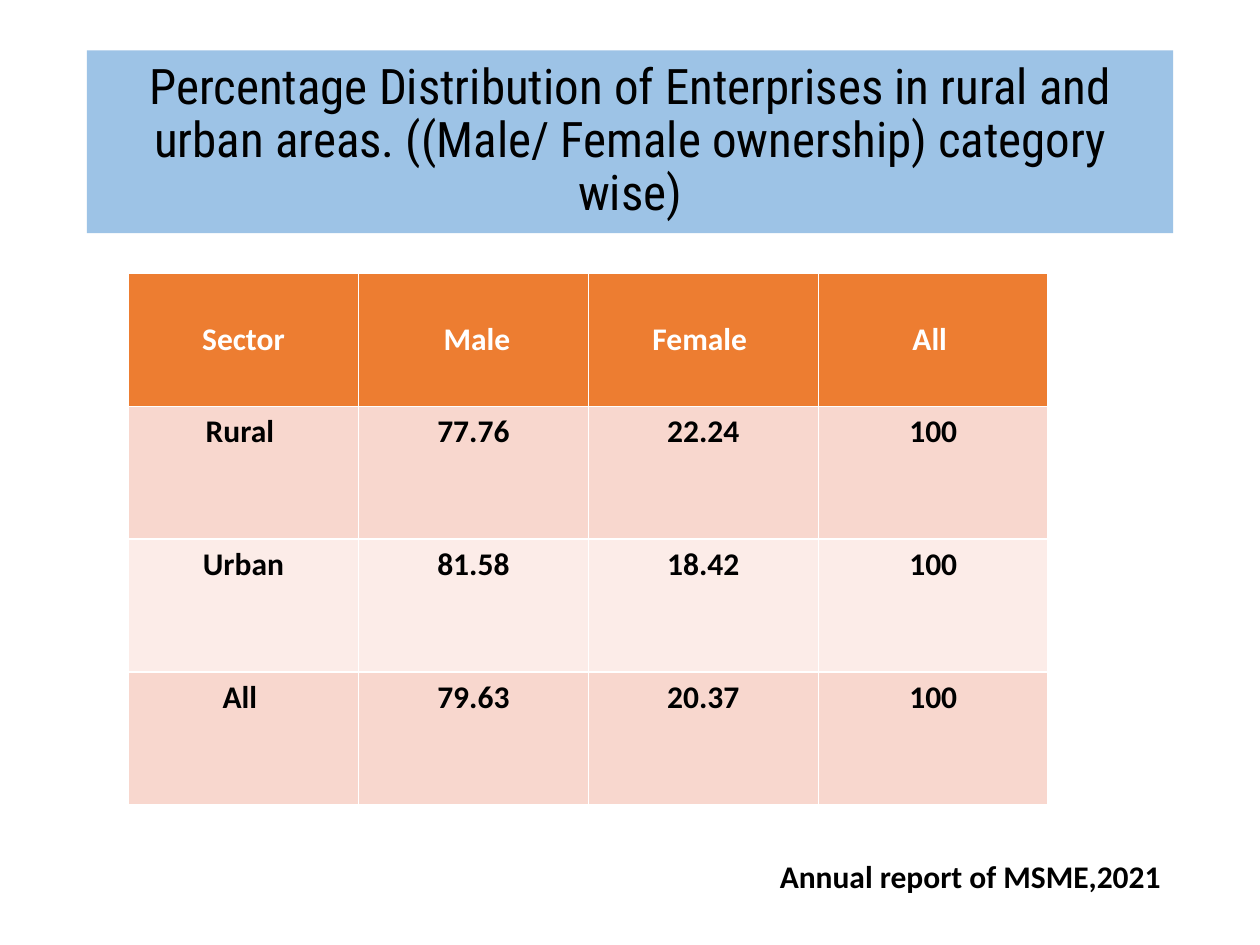
from pptx import Presentation
from pptx.dml.color import RGBColor
from pptx.enum.shapes import MSO_SHAPE as Shape
from pptx.enum.text import MSO_ANCHOR as Anchor, PP_ALIGN as Align
from pptx.util import Inches, Pt

COLORS = {
    "title_band": "9DC3E6",
    "header": "ED7D31",
    "odd_row": "F8D7CE",
    "even_row": "FCECE8",
    "white": "FFFFFF",
    "black": "000000",
}
ROWS = [
    ["Sector", " Male", "Female ", "All "],
    ["Rural ", "77.76", "22.24", "100"],
    ["Urban", "81.58", "18.42", "100"],
    ["All ", "79.63", "20.37", "100"],
]


class SlideBuilder:
    """Holds the style and the slide that elements are added to."""

    title_font = "Roboto Condensed"
    body_font = "Calibri"
    body_size = 18

    def __init__(self, slide):
        self.slide = slide

    def fill(self, target, color):
        target.fill.solid()
        target.fill.fore_color.rgb = RGBColor.from_string(COLORS[color])

    def add_text(self, frame, text, color="black", align=Align.CENTER,
                 font=body_font, size=body_size, bold=True):
        paragraph = frame.paragraphs[0]
        paragraph.alignment = align
        run = paragraph.add_run()
        run.text = text
        run.font.name = font
        run.font.size = Pt(size)
        run.font.bold = bold
        run.font.color.rgb = RGBColor.from_string(COLORS[color])
        return paragraph

    def title(self, text, left, top, width, height):
        band = self.slide.shapes.add_shape(
            Shape.RECTANGLE, Inches(left), Inches(top), Inches(width), Inches(height))
        band.shadow.inherit = False
        band.line.fill.background()
        self.fill(band, "title_band")
        frame = band.text_frame
        frame.word_wrap = True
        frame.vertical_anchor = Anchor.MIDDLE
        paragraph = self.add_text(frame, text, font=self.title_font, size=28, bold=False)
        paragraph.line_spacing = 0.9

    def table(self, rows, left, top, width, height):
        """Add a table with a header row; the table style draws its white borders."""
        table = self.slide.shapes.add_table(
            len(rows), len(rows[0]),
            Inches(left), Inches(top), Inches(width), Inches(height)).table
        for row_index, row in enumerate(rows):
            is_header = row_index == 0
            band = "header" if is_header else "odd_row" if row_index % 2 else "even_row"
            for column_index, text in enumerate(row):
                cell = table.cell(row_index, column_index)
                self.fill(cell, band)
                cell.vertical_anchor = Anchor.MIDDLE if is_header else Anchor.TOP
                self.add_text(cell.text_frame, text, "white" if is_header else "black")

    def note(self, text, left, top, width, height):
        box = self.slide.shapes.add_textbox(
            Inches(left), Inches(top), Inches(width), Inches(height))
        box.text_frame.word_wrap = False
        self.add_text(box.text_frame, text, align=Align.LEFT)


def main():
    presentation = Presentation()
    presentation.slide_width = Inches(10)
    presentation.slide_height = Inches(7.5)
    builder = SlideBuilder(presentation.slides.add_slide(presentation.slide_layouts[6]))
    builder.title(
        "Percentage Distribution of Enterprises in rural and urban areas. "
        "((Male/ Female ownership) category wise)", 0.69, 0.4, 8.62, 1.45)
    builder.table(ROWS, 1.02, 2.17, 7.3, 4.22)
    builder.note("Annual report of MSME,2021", 6.09, 6.75, 3.25, 0.4)
    presentation.save("out.pptx")


if __name__ == "__main__":
    main()
